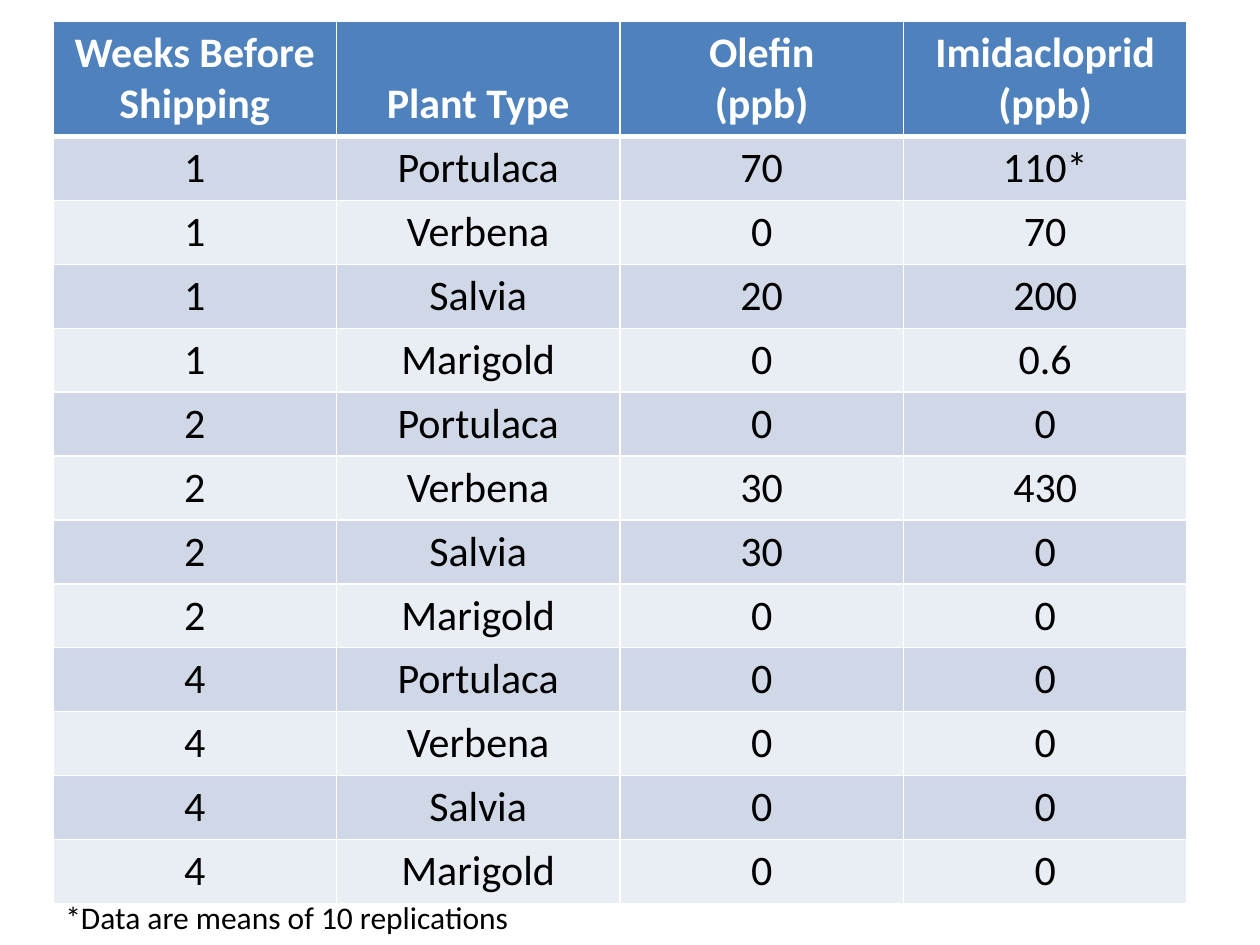
from pptx import Presentation
from pptx.dml.color import RGBColor
from pptx.enum.text import MSO_ANCHOR, PP_ALIGN
from pptx.oxml import parse_xml
from pptx.oxml.ns import nsdecls
from pptx.util import Inches, Pt

WHITE = RGBColor(0xFF, 0xFF, 0xFF)
BLACK = RGBColor(0x00, 0x00, 0x00)
HEADER_BLUE = RGBColor(0x4F, 0x81, 0xBD)
BAND_DARK = RGBColor(0xD0, 0xD8, 0xE8)
BAND_LIGHT = RGBColor(0xE9, 0xED, 0xF4)
FONT = "Calibri"

HEADERS = ["Weeks Before Shipping", "Plant Type", "Olefin\n(ppb)", "Imidacloprid (ppb)"]
WEEKS = ["1", "2", "4"]
PLANTS = ["Portulaca", "Verbena", "Salvia", "Marigold"]
RESIDUES = [
    ("70", "110*"), ("0", "70"), ("20", "200"), ("0", "0.6"),
    ("0", "0"), ("30", "430"), ("30", "0"), ("0", "0"),
    ("0", "0"), ("0", "0"), ("0", "0"), ("0", "0"),
]


def set_borders(cell, bottom):
    tcPr = cell._tc.get_or_add_tcPr()
    for side, width in (("L", 1), ("R", 1), ("T", 1), ("B", bottom)):
        tcPr.append(parse_xml(
            f'<a:ln{side} {nsdecls("a")} w="{Pt(width)}"><a:solidFill>'
            f'<a:srgbClr val="{WHITE}"/></a:solidFill></a:ln{side}>'))


prs = Presentation()
prs.slide_width = Inches(10)
prs.slide_height = Inches(7.5)
s = prs.slides.add_slide(prs.slide_layouts[6])

samples = [(week, plant) for week in WEEKS for plant in PLANTS]
rows = [HEADERS] + [sample + residue for sample, residue in zip(samples, RESIDUES)]

table = s.shapes.add_table(len(rows), len(HEADERS), Inches(0.42), Inches(0.17),
                           Inches(9), Inches(6.9)).table
for col in table.columns:
    col.width = Inches(2.25)

for i, values in enumerate(rows):
    is_header = i == 0
    table.rows[i].height = Inches(0.9 if is_header else 0.5)
    band = BAND_DARK if i % 2 else BAND_LIGHT
    for j, value in enumerate(values):
        cell = table.cell(i, j)
        set_borders(cell, 3 if is_header or i == 0 else 1)
        cell.fill.solid()
        cell.fill.fore_color.rgb = HEADER_BLUE if is_header else band
        cell.vertical_anchor = MSO_ANCHOR.BOTTOM if is_header else MSO_ANCHOR.TOP
        cell.text_frame.text = value
        for p in cell.text_frame.paragraphs:
            p.alignment = PP_ALIGN.CENTER
            for r in p.runs:
                r.font.name = FONT
                r.font.size = Pt(24)
                r.font.bold = is_header
                r.font.color.rgb = WHITE if is_header else BLACK

footnote = s.shapes.add_textbox(Inches(0.42), Inches(7.08), Inches(4.17), Inches(0.4))
tf = footnote.text_frame
tf.word_wrap = True
tf.text = "*Data are means of 10 replications"
r = tf.paragraphs[0].runs[0]
r.font.name = FONT
r.font.size = Pt(18)
r.font.color.rgb = BLACK

prs.save("out.pptx")
